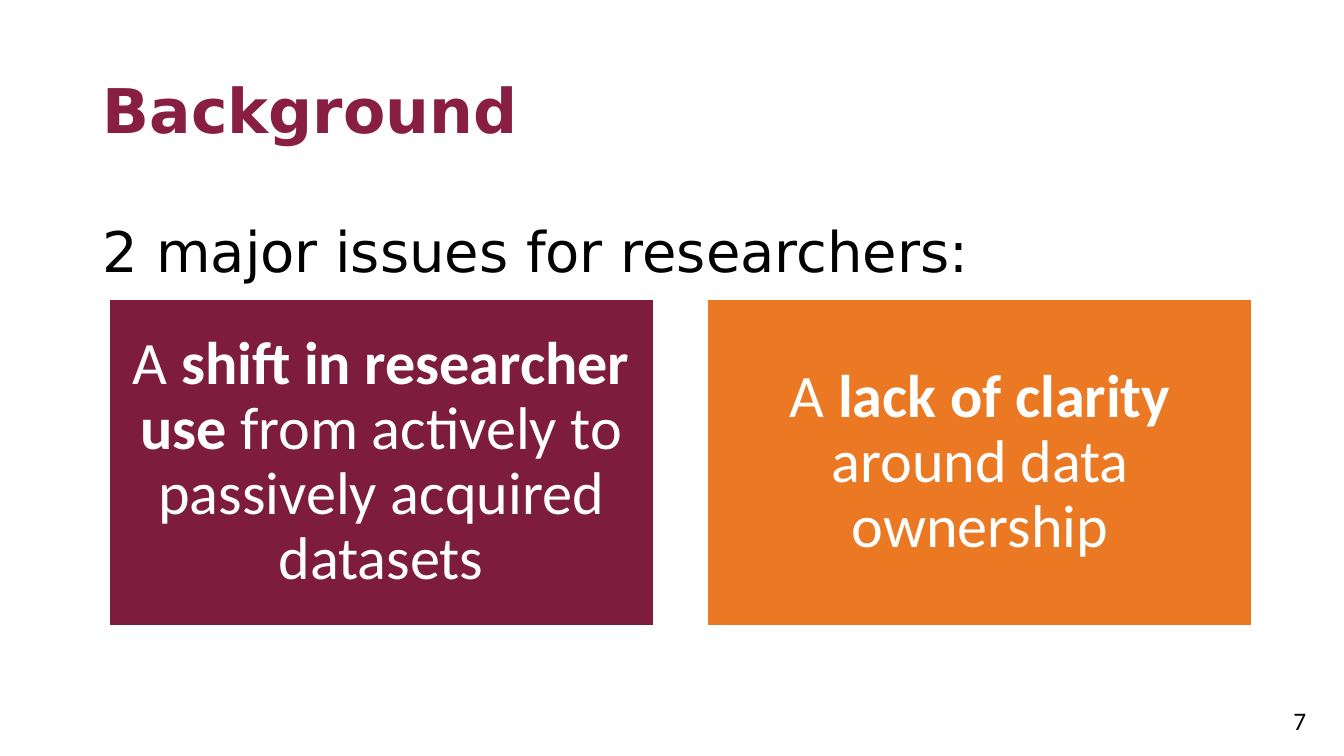
from dataclasses import dataclass

from pptx import Presentation
from pptx.dml.color import RGBColor as RGB
from pptx.enum.shapes import MSO_SHAPE as SHAPE
from pptx.enum.text import MSO_ANCHOR as ANCHOR, MSO_AUTO_SIZE as AUTO, PP_ALIGN as ALIGN
from pptx.oxml.ns import qn
from pptx.util import Inches, Pt


@dataclass(frozen=True)
class Theme:
    heading_font: str = "DejaVu Sans"
    font: str = "Calibri"
    title: RGB = RGB(0x88, 0x1F, 0x42)
    text: RGB = RGB(0, 0, 0)
    white: RGB = RGB(0xFF, 0xFF, 0xFF)
    maroon: RGB = RGB(0x7E, 0x1C, 0x3D)
    orange: RGB = RGB(0xEB, 0x79, 0x24)
    title_size: int = 44
    lead_size: int = 40
    card_size: int = 43
    number_size: int = 18


THEME = Theme()


def place(sp, left, top, width, height):
    sp.left, sp.top = Inches(left), Inches(top)
    sp.width, sp.height = Inches(width), Inches(height)


def style_run(r, font, size, color, bold=False):
    r.font.name, r.font.size, r.font.bold = font, Pt(size), bold
    r.font.color.rgb = color


def fill_placeholder(sp, box, text, size, color, anchor, bold=False):
    place(sp, *box)
    tf = sp.text_frame
    tf.text = text
    tf.auto_size = AUTO.NONE
    tf.vertical_anchor = anchor
    p = tf.paragraphs[0]
    p.alignment, p.line_spacing, p.space_before = ALIGN.LEFT, 0.9, Pt(0)
    # Lead text without a bullet or hanging indent
    pPr = p._p.get_or_add_pPr()
    pPr.set("marL", "0")
    pPr.set("indent", "0")
    pPr.append(pPr.makeelement(qn("a:buNone"), {}))
    style_run(p.runs[0], THEME.heading_font, size, color, bold)


def add_card(slide, box, color, parts):
    sp = slide.shapes.add_shape(SHAPE.RECTANGLE, *map(Inches, box))
    sp.shadow.inherit = False
    sp.fill.solid()
    sp.fill.fore_color.rgb = color
    sp.line.color.rgb = THEME.white
    sp.line.width = Pt(1)
    tf = sp.text_frame
    tf.word_wrap = True
    tf.vertical_anchor = ANCHOR.MIDDLE
    tf.margin_left = tf.margin_right = tf.margin_top = tf.margin_bottom = Inches(0.18)
    p = tf.paragraphs[0]
    p.alignment, p.line_spacing = ALIGN.CENTER, 0.9
    for text, bold in parts:
        r = p.add_run()
        r.text = text
        style_run(r, THEME.font, THEME.card_size, THEME.white, bold)


def add_page_number(slide, box, number):
    tf = slide.shapes.add_textbox(*map(Inches, box)).text_frame
    tf.word_wrap = True
    tf.text = number
    style_run(tf.paragraphs[0].runs[0], THEME.font, THEME.number_size, THEME.text)


def main():
    prs = Presentation()
    prs.slide_width, prs.slide_height = Inches(13.33), Inches(7.5)
    slide = prs.slides.add_slide(prs.slide_layouts[1])

    # Title and lead-in
    fill_placeholder(slide.shapes.title, (0.92, 0.4, 11.5, 1.45), "Background",
                     THEME.title_size, THEME.title, ANCHOR.MIDDLE, bold=True)
    fill_placeholder(slide.placeholders[1], (0.92, 2.17, 11.5, 4.28),
                     "2 major issues for researchers:",
                     THEME.lead_size, THEME.text, ANCHOR.TOP)

    add_page_number(slide, (12.73, 6.95, 0.6, 0.4), "7")

    # Two issue cards side by side
    issues = [
        (THEME.maroon, "shift in researcher use ",
         "from actively to passively acquired datasets"),
        (THEME.orange, "lack of clarity ", "around data ownership"),
    ]
    card_width, gap = 5.4, 0.54
    for i, (color, key, rest) in enumerate(issues):
        left = 1.08 + i * (card_width + gap)
        add_card(slide, (left, 2.97, card_width, 3.24), color,
                 [("A ", False), (key, True), (rest, False)])

    prs.save("out.pptx")


if __name__ == "__main__":
    main()
